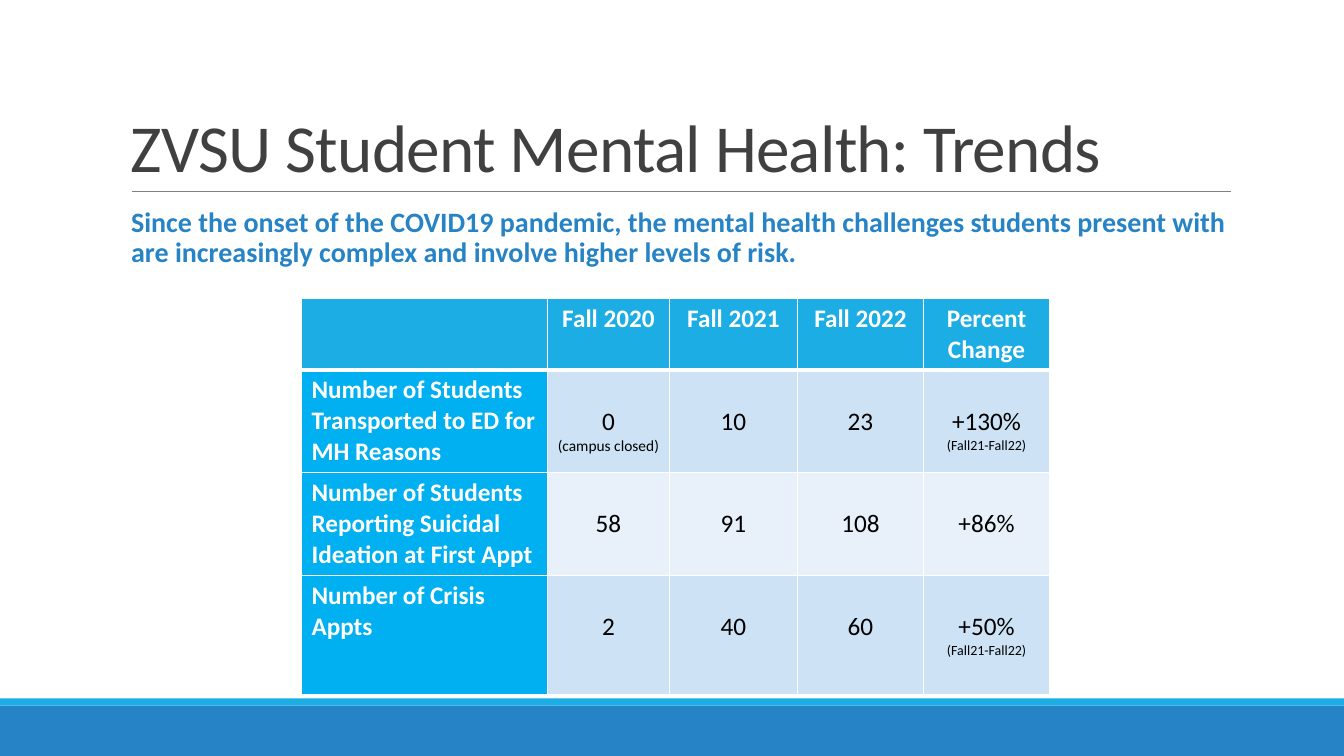
from lxml import etree
from pptx import Presentation
from pptx import util as u
from pptx.dml.color import RGBColor
from pptx.enum import shapes, text
from pptx.oxml import ns

COLORS = {
    "blue": "2683C6", "cyan": "1CADE4", "label": "00B0F0",
    "band": "CDE3F5", "pale": "E8F1FA", "rule": "808080",
    "title": "404040", "white": "FFFFFF", "black": "000000",
}
Inches, Pt = u.Inches, u.Pt


def rgb(name):
    return RGBColor.from_string(COLORS[name])


def write(para, words, size, color, bold=False):
    """Add one formatted span to a paragraph and return it."""
    span = para.add_run()
    span.text = words
    formats = {"name": "Calibri", "size": Pt(size), "bold": bold}
    for key, value in formats.items():
        setattr(span.font, key, value)
    span.font.color.rgb = rgb(color)
    return span


deck = Presentation()
deck.slide_width, deck.slide_height = Inches(13.33), Inches(7.5)
page = deck.slides.add_slide(deck.slide_layouts[6])

# Footer bars
for top, height, color in [(7, 0.5, "blue"), (6.93, 0.07, "cyan")]:
    bar = page.shapes.add_shape(
        shapes.MSO_SHAPE.RECTANGLE, 0, Inches(top), deck.slide_width, Inches(height))
    bar.shadow.inherit = False
    bar.fill.solid()
    bar.fill.fore_color.rgb = rgb(color)
    bar.line.fill.background()

# Rule under the title
rule = page.shapes.add_connector(
    shapes.MSO_CONNECTOR.STRAIGHT, Inches(1.31), Inches(1.9), Inches(12.21), Inches(1.9))
rule.line.color.rgb = rgb("rule")
rule.line.width = Pt(0.5)
etree.SubElement(rule.element.spPr, ns.qn("a:effectLst"))

# Title and lead sentence
title_box = page.shapes.add_textbox(Inches(1.2), Inches(0.31), Inches(11), Inches(1.59))
title_box.text_frame.word_wrap = True
title_box.text_frame.vertical_anchor = text.MSO_ANCHOR.BOTTOM
title_para = title_box.text_frame.paragraphs[0]
title_para.line_spacing = 0.85
title_span = write(title_para, "ZVSU Student Mental Health: Trends", 48, "title")
title_span.font._element.set("spc", "-50")

lead_box = page.shapes.add_textbox(Inches(1.3), Inches(2.02), Inches(10.9), Inches(0.8))
lead_box.text_frame.word_wrap = True
lead_box.text_frame.margin_left = lead_box.text_frame.margin_right = 0
lead_para = lead_box.text_frame.paragraphs[0]
lead_format = {"line_spacing": 0.9, "space_before": Pt(2), "space_after": Pt(4)}
for key, value in lead_format.items():
    setattr(lead_para, key, value)
write(lead_para,
      "Since the onset of the COVID19 pandemic, the mental health challenges students "
      "present with are increasingly complex and involve higher levels of risk.",
      20, "blue", bold=True)

# Trend table: a value may carry a small note, given as (value, note, note size)
since_2021 = ("(Fall21-Fall22)", 10)
rows = [
    ["", "Fall 2020", "Fall 2021", "Fall 2022", "Percent Change"],
    ["Number of Students Transported to ED for MH Reasons",
     ("0", "(campus closed)", 11), "10", "23", ("+130%", *since_2021)],
    ["Number of Students Reporting Suicidal Ideation at First Appt",
     "58", "91", "108", "+86%"],
    ["Number of Crisis Appts", "2", "40", "60", ("+50%", *since_2021)],
]
widths = [2.44, 1.21, 1.27, 1.25, 1.25]
heights = [0.71, 1.02, 1.02, 1.18]
table = page.shapes.add_table(
    len(rows), len(widths), Inches(2.99), Inches(2.96),
    Inches(sum(widths)), Inches(sum(heights))).table
for column, width in zip(table.columns, widths):
    column.width = Inches(width)
for row, height in zip(table.rows, heights):
    row.height = Inches(height)

for r, values in enumerate(rows):
    for c, value in enumerate(values):
        cell = table.cell(r, c)
        borders = {"lnL": 1, "lnR": 1, "lnT": 3 if r == 1 else 1, "lnB": 3 if r == 0 else 1}
        properties = cell._tc.get_or_add_tcPr()
        for side, points in borders.items():
            line = etree.SubElement(properties, ns.qn("a:" + side), w=str(Pt(points)))
            fill = etree.SubElement(line, ns.qn("a:solidFill"))
            etree.SubElement(fill, ns.qn("a:srgbClr"), val=COLORS["white"])

        is_value = r > 0 and c > 0
        if r == 0:
            background = "cyan"
        elif c == 0:
            background = "label"
        else:
            background = "band" if r % 2 else "pale"
        cell.fill.solid()
        cell.fill.fore_color.rgb = rgb(background)
        if is_value:
            cell.margin_top = Inches(0.36)
            cell.margin_left = cell.margin_right = Inches(0.05)

        words, *note = value if isinstance(value, tuple) else (value,)
        para = cell.text_frame.paragraphs[0]
        if words:
            write(para, words, 18, "black" if is_value else "white", bold=not is_value)
        if note:
            write(cell.text_frame.add_paragraph(), *note, "black")
        if c > 0:
            for para in cell.text_frame.paragraphs:
                para.alignment = text.PP_ALIGN.CENTER

deck.save("out.pptx")
